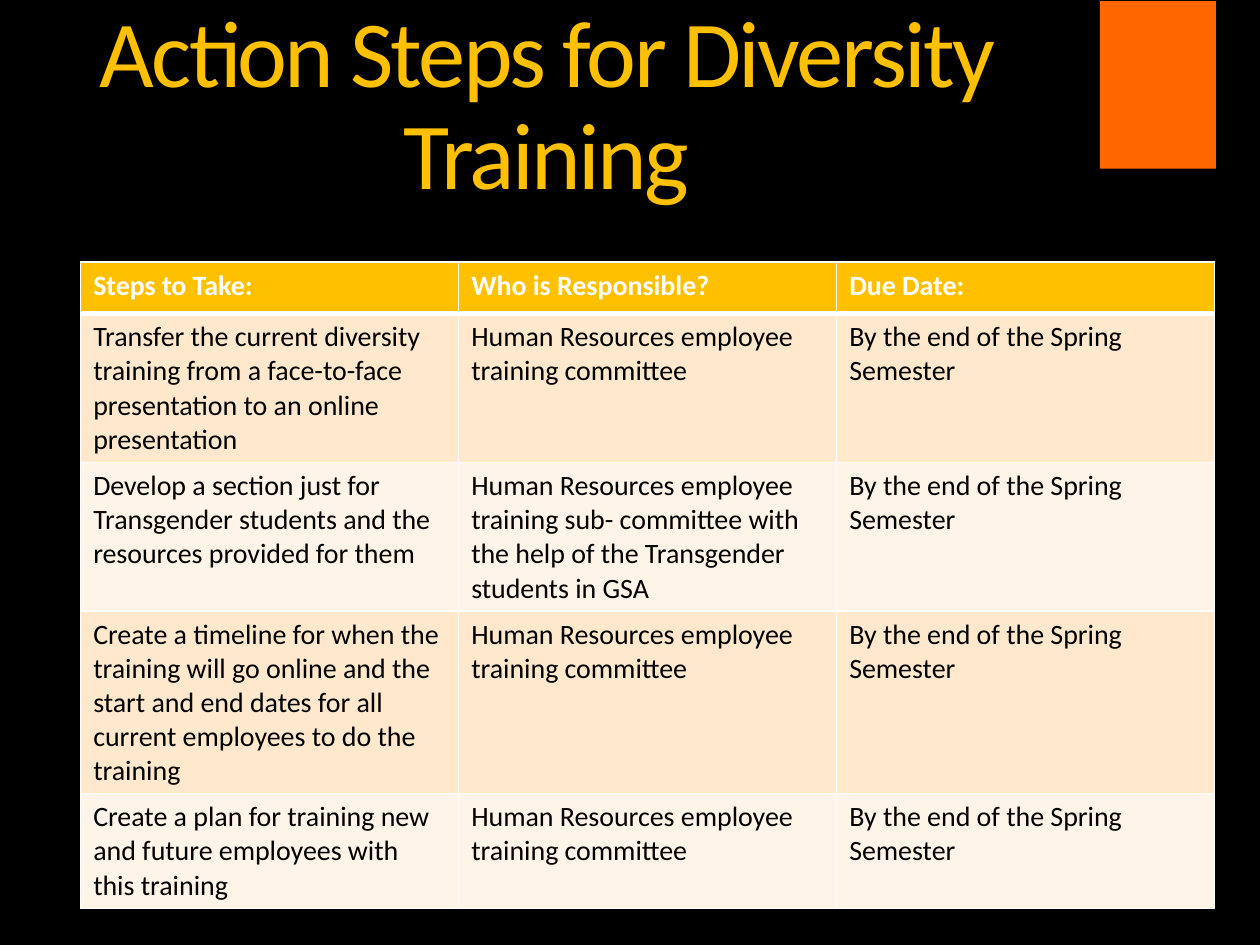
"""Build the slide of action steps for diversity training."""
import lxml.etree
import pptx
import pptx.dml.color
import pptx.enum.shapes
import pptx.enum.text
import pptx.oxml.ns
import pptx.util

BLACK = pptx.dml.color.RGBColor(0x00, 0x00, 0x00)
WHITE = pptx.dml.color.RGBColor(0xFF, 0xFF, 0xFF)
GOLD = pptx.dml.color.RGBColor(0xFF, 0xC0, 0x00)
ORANGE = pptx.dml.color.RGBColor(0xFF, 0x66, 0x00)
PEACH = pptx.dml.color.RGBColor(0xFF, 0xE8, 0xCC)
CREAM = pptx.dml.color.RGBColor(0xFF, 0xF4, 0xE7)

COMMITTEE = "Human Resources employee training committee"
DEADLINE = "By the end of the Spring Semester"
HEADINGS = ["Steps to Take:", "Who is Responsible?", "Due Date:"]
STEPS = [
    ("Transfer the current diversity training from a face-to-face presentation to an online presentation",
     COMMITTEE, 4),
    ("Develop a section just for Transgender students and the resources provided for them",
     "Human Resources employee training sub- committee with the help of the Transgender students in GSA", 4),
    ("Create a timeline for when the training will go online and the start and end dates "
     "for all current employees to do the training", COMMITTEE, 5),
    ("Create a plan for training new and future employees with this training", COMMITTEE, 3),
]
LINE_HEIGHT = 0.27
CELL_PADDING = 0.1


def add_run(paragraph, text, size, color, bold=False):
    run = paragraph.add_run()
    run.text = text
    run.font.name = "Calibri"
    run.font.size = pptx.util.Pt(size)
    run.font.color.rgb = color
    run.font.bold = bold
    return run


def add_border(cell, side, points):
    line = lxml.etree.SubElement(cell._tc.get_or_add_tcPr(), pptx.oxml.ns.qn("a:" + side),
                                 w=str(pptx.util.Pt(points)))
    fill = lxml.etree.SubElement(line, pptx.oxml.ns.qn("a:solidFill"))
    lxml.etree.SubElement(fill, pptx.oxml.ns.qn("a:srgbClr"), val=str(WHITE))


deck = pptx.Presentation()
deck.slide_width = pptx.util.Inches(10)
deck.slide_height = pptx.util.Inches(7.5)
slide = deck.slides.add_slide(deck.slide_layouts[6])
slide.background.fill.solid()
slide.background.fill.fore_color.rgb = BLACK

title = slide.shapes.add_textbox(0, pptx.util.Inches(0.04), pptx.util.Inches(8.67), pptx.util.Inches(1.64))
title_frame = title.text_frame
title_frame.word_wrap = True
title_frame.vertical_anchor = pptx.enum.text.MSO_ANCHOR.MIDDLE
title_frame.margin_left = title_frame.margin_right = 0
title_frame.margin_top = title_frame.margin_bottom = 0
title_line = title_frame.paragraphs[0]
title_line.alignment = pptx.enum.text.PP_ALIGN.CENTER
title_line.line_spacing = 0.9
title_run = add_run(title_line, "Action Steps for Diversity Training", 54, GOLD)
title_run._r.get_or_add_rPr().set("spc", "-150")

rows = [HEADINGS] + [[step, owner, DEADLINE] for step, owner, lines in STEPS]
heights = [0.41] + [lines * LINE_HEIGHT + CELL_PADDING for step, owner, lines in STEPS]
plan = slide.shapes.add_table(len(rows), len(HEADINGS), pptx.util.Inches(0.64), pptx.util.Inches(2.08),
                              pptx.util.Inches(9), pptx.util.Inches(sum(heights))).table
plan.horz_banding = False
for row_index, (texts, height) in enumerate(zip(rows, heights)):
    plan.rows[row_index].height = pptx.util.Inches(height)
    is_heading = row_index == 0
    for column_index, text in enumerate(texts):
        cell = plan.cell(row_index, column_index)
        add_border(cell, "lnL", 1)
        add_border(cell, "lnR", 1)
        add_border(cell, "lnT", 3 if row_index == 1 else 1)
        add_border(cell, "lnB", 3 if is_heading else 1)
        cell.fill.solid()
        cell.fill.fore_color.rgb = GOLD if is_heading else (CREAM, PEACH)[row_index % 2]
        add_run(cell.text_frame.paragraphs[0], text, 16, WHITE if is_heading else BLACK, is_heading)

accent = slide.shapes.add_shape(pptx.enum.shapes.MSO_SHAPE.RECTANGLE, pptx.util.Inches(8.73),
                                pptx.util.Inches(0.01), pptx.util.Inches(0.92), pptx.util.Inches(1.33))
accent.shadow.inherit = False
accent.fill.solid()
accent.fill.fore_color.rgb = ORANGE
accent.line.fill.background()

deck.save("out.pptx")
